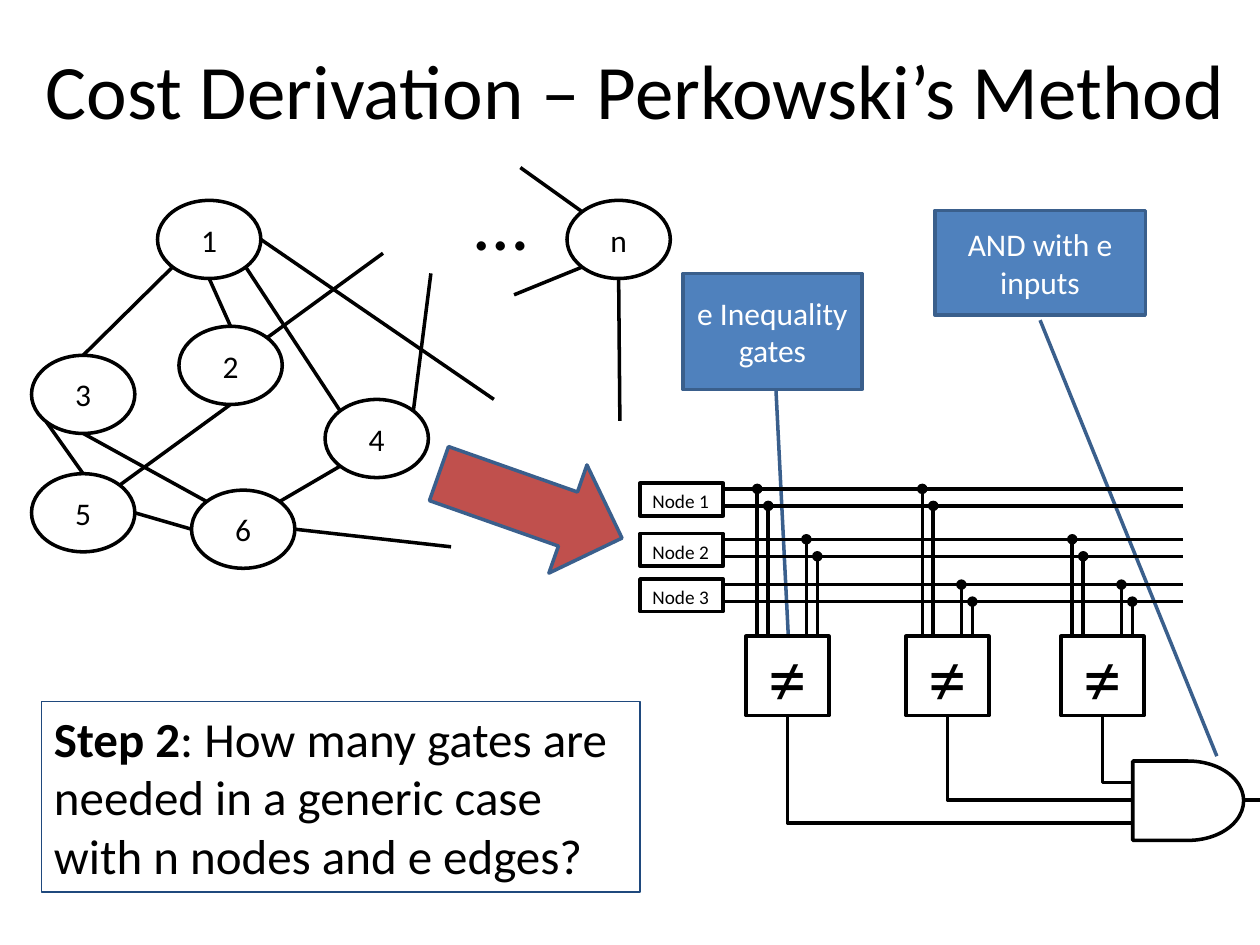
from lxml.etree import SubElement
from pptx import Presentation
from pptx.dml.color import RGBColor
from pptx.enum.shapes import MSO_CONNECTOR, MSO_SHAPE
from pptx.enum.text import MSO_ANCHOR, PP_ALIGN
from pptx.oxml.ns import qn
from pptx.util import Inches, Pt

prs = Presentation()
prs.slide_width, prs.slide_height = Inches(10), Inches(7.5)
slide = prs.slides.add_slide(prs.slide_layouts[6])

# Grid of 100 columns by 75 rows
COL, ROW = prs.slide_width / 100, prs.slide_height / 75
BLACK, WHITE, BLUE, BLUE_EDGE = "000000", "FFFFFF", "4F81BD", "3A5F8C"
rgb = RGBColor.from_string


def box(kind, col, row, cols, rows, text="", *, lead="", size=18, color=BLACK,
        fill=None, line=BLACK, width=2, align=PP_ALIGN.CENTER, anchor=MSO_ANCHOR.MIDDLE):
    """Place a shape, or a text box when kind is None; lead is bold opening text."""
    place = [round(v) for v in (col * COL, row * ROW, cols * COL, rows * ROW)]
    if kind is None:
        shape = slide.shapes.add_textbox(*place)
    else:
        shape = slide.shapes.add_shape(kind, *place)
        shape.shadow.inherit = False
    if fill:
        shape.fill.solid()
        shape.fill.fore_color.rgb = rgb(fill)
    else:
        shape.fill.background()
    if line:
        shape.line.color.rgb = rgb(line)
        shape.line.width = Pt(width)
    else:
        shape.line.fill.background()
    frame = shape.text_frame
    frame.word_wrap = True
    frame.vertical_anchor = anchor
    paragraph = frame.paragraphs[0]
    paragraph.alignment = align
    for part, bold in ((lead, True), (text, False)):
        if part:
            run = paragraph.add_run()
            run.text = part
            run.font.name, run.font.size, run.font.bold = "Calibri", Pt(size), bold
            run.font.color.rgb = rgb(color)
    return shape


def wire(start, end, kind=MSO_CONNECTOR.STRAIGHT, dot=False):
    """Draw a black connector between two (column, row) points."""
    (x1, y1), (x2, y2) = start, end
    connector = slide.shapes.add_connector(
        kind, round(x1 * COL), round(y1 * ROW), round(x2 * COL), round(y2 * ROW))
    connector.line.color.rgb = rgb(BLACK)
    connector.line.width = Pt(2)
    if dot:
        SubElement(connector.line._get_or_add_ln(), qn("a:headEnd"), type="oval")
    SubElement(connector._element.spPr, qn("a:effectLst"))
    return connector


# Title and question
box(None, 1.7, 0.8, 97.5, 12.5, "Cost Derivation – Perkowski’s Method", size=44, line=None)
box(None, 3.3, 55.7, 47.5, 15.1,
    ": How many gates are needed in a generic case with n nodes and e edges?",
    lead="Step 2", size=28, line="1F497D", width=0.75,
    align=PP_ALIGN.LEFT, anchor=MSO_ANCHOR.TOP)

# Graph nodes, and the points on their rims where edges meet
NODE_W, NODE_H = 8.2, 6.2
DIAGONAL = 0.71
compass = {"N": (0, -1), "S": (0, 1), "E": (1, 0), "W": (-1, 0),
           "NE": (DIAGONAL, -DIAGONAL), "NW": (-DIAGONAL, -DIAGONAL),
           "SE": (DIAGONAL, DIAGONAL), "SW": (-DIAGONAL, DIAGONAL)}
nodes = {"1": (12.5, 15.9), "2": (14.2, 25.9), "3": (2.5, 28.2), "4": (25.8, 31.7),
         "5": (2.5, 37.6), "6": (15.2, 38.9), "n": (45, 15.9)}
rim = {}
for label, (col, row) in nodes.items():
    box(MSO_SHAPE.OVAL, col, row, NODE_W, NODE_H, label, fill=WHITE)
    for side, (dx, dy) in compass.items():
        rim[label, side] = (col + NODE_W / 2 * (1 + dx), row + NODE_H / 2 * (1 + dy))
box(None, 36.7, 13.3, 9.2, 8.4, "…", size=44, line=None,
    align=PP_ALIGN.LEFT, anchor=MSO_ANCHOR.TOP)

# Edges between drawn nodes
for edge in ("1 SW 3 N", "6 NW 3 S", "1 S 2 N", "3 SW 5 N",
             "2 S 5 NE", "6 W 5 E", "1 SE 4 NW", "4 SW 6 NE"):
    first, first_side, second, second_side = edge.split()
    wire(rim[first, first_side], rim[second, second_side])

# Edges that lead to nodes not drawn
for label, side, loose_end in (
        ("1", "E", (39.2, 31.7)), ("4", "NE", (34.2, 21.7)), ("2", "NE", (30.4, 20.1)),
        ("6", "E", (35.8, 43.4)), ("n", "S", (49.2, 33.4)), ("n", "SW", (40.8, 23.4)),
        ("n", "NW", (41.3, 13.3))):
    wire(rim[label, side], loose_end)

# Arrow from graph to circuit
arrow = box(MSO_SHAPE.RIGHT_ARROW, 34.4, 35.6, 15.4, 9.1, fill="C0504D", line=BLUE_EDGE)
arrow.rotation = 19.4

# Callouts with their pointer positions
for col, row, cols, rows, text, pointer in (
        (54.2, 21.7, 14.2, 9.2, "e Inequality gates", (1, 0.52, 3.16, 0.59)),
        (74.2, 16.7, 16.7, 8.3, "AND with e inputs", (1.05, 0.5, 5.22, 1.34))):
    callout = box(MSO_SHAPE.LINE_CALLOUT_1, col, row, cols, rows, text,
                  color=WHITE, fill=BLUE, line=BLUE_EDGE)
    for index, value in enumerate(pointer):
        callout.adjustments[index] = value

# Two bus lines per node register
BUS_GAP = 1.35
bus_rows = {"Node 1": 38.8, "Node 2": 42.8, "Node 3": 46.4}
for register, row in bus_rows.items():
    for bus_row in (row, row + BUS_GAP):
        wire((56.1, bus_row), (93.9, bus_row))
for register, row in bus_rows.items():
    box(MSO_SHAPE.RECTANGLE, 50.8, row - 0.45, 6.6, 2.6, register, size=11,
        fill=WHITE, align=PP_ALIGN.LEFT, anchor=MSO_ANCHOR.TOP)

# AND gate and its output
AND_LEFT, AND_TOP, AND_W, AND_H = 89.9, 60.4, 8.8, 6.3
box(MSO_SHAPE.FLOWCHART_DELAY, AND_LEFT, AND_TOP, AND_W, AND_H, fill=WHITE)
wire((AND_LEFT + AND_W, 63.5), (100, 63.5))

# Inequality gates: taps from the buses, then an elbow down to the AND gate
GATE_TOP, GATE_W, GATE_H, TAP_GAP = 50.5, 6.6, 6.3, 0.87
for gate_col, input_row, taps in (
        (59.2, 65.3, {"Node 1": 60.1, "Node 2": 64}),
        (71.9, 63.5, {"Node 1": 73.2, "Node 3": 76.3}),
        (84.2, 62.1, {"Node 2": 85.1, "Node 3": 89})):
    gate = box(MSO_SHAPE.RECTANGLE, gate_col, GATE_TOP, GATE_W, GATE_H, "≠",
               size=44, fill=WHITE)
    for register, tap_col in taps.items():
        for i in range(2):
            tap = tap_col + i * TAP_GAP
            wire((tap, bus_rows[register] + i * BUS_GAP), (tap, GATE_TOP), dot=True)

    # A one-corner elbow, turned so that it leaves the gate downwards
    out_col, out_row = gate_col + GATE_W / 2, GATE_TOP + GATE_H
    across, down = AND_LEFT - out_col, input_row - out_row
    mid_col, mid_row = out_col + across / 2, out_row + down / 2
    elbow = wire((mid_col - down / 2, mid_row - across / 2),
                 (mid_col + down / 2, mid_row + across / 2), MSO_CONNECTOR.ELBOW)
    properties = elbow._element.spPr
    properties.find(qn("a:prstGeom")).set("prst", "bentConnector2")
    turn = properties.find(qn("a:xfrm"))
    turn.set("rot", str(270 * 60000))
    turn.set("flipH", "1")

prs.save("out.pptx")
